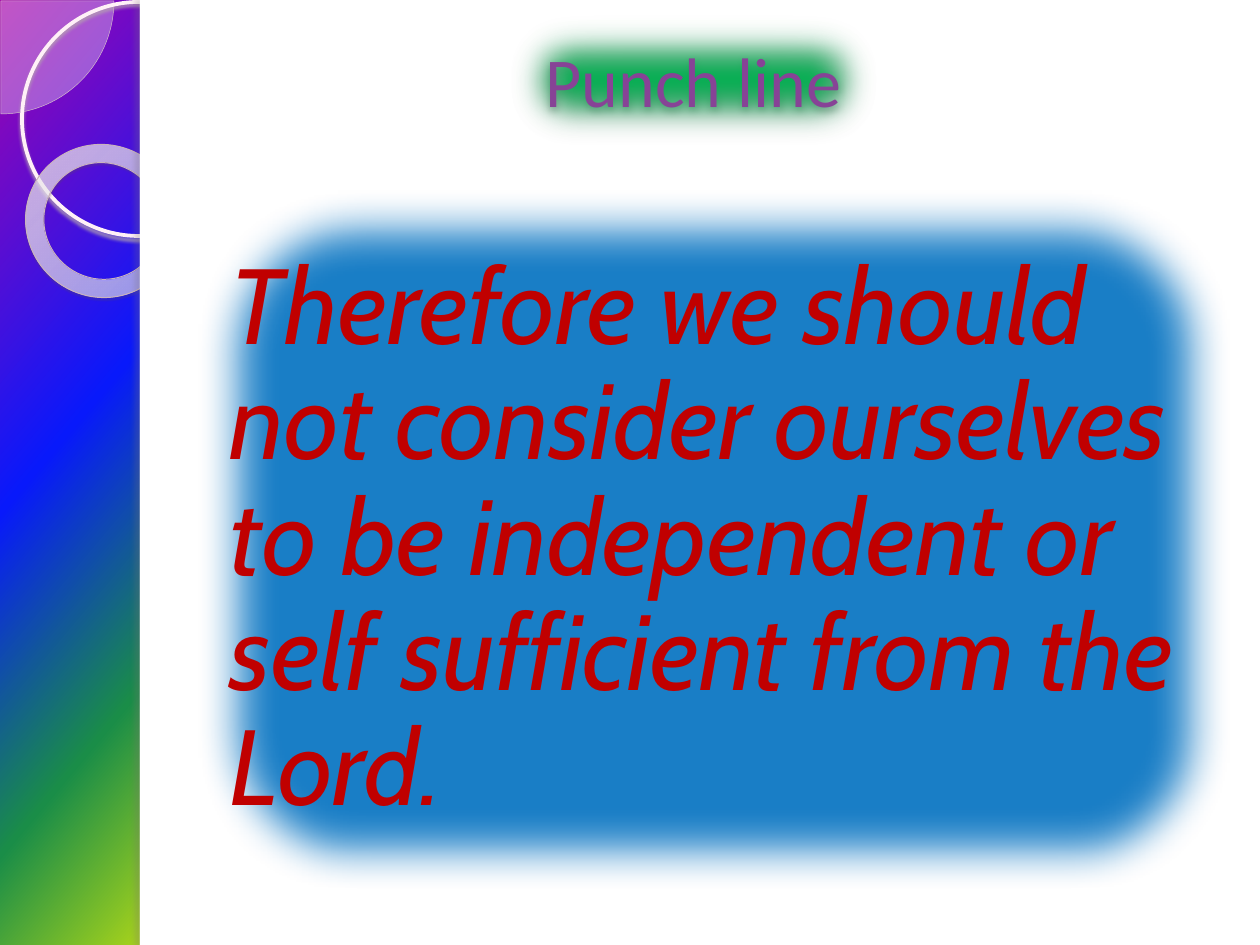
import pptx
import pptx.util
import pptx.dml.color
import pptx.enum.shapes
import pptx.enum.text
import pptx.oxml.ns
from lxml import etree

PX = 914400 / 126
Pt = pptx.util.Pt
RGB = pptx.dml.color.RGBColor
KIND = pptx.enum.shapes.MSO_SHAPE
MIDDLE = pptx.enum.text.MSO_ANCHOR.MIDDLE
qn = pptx.oxml.ns.qn

WHITE = RGB(0xFF, 0xFF, 0xFF)
PALE = RGB(0xFE, 0xFA, 0xFC)
CREAM = RGB(0xFF, 0xFD, 0xFE)
PINK = RGB(0xE7, 0xBC, 0xD0)
BLUSH = RGB(0xFF, 0xF0, 0xF7)
ROSE = RGB(0xD7, 0xC0, 0xCB)
MAUVE = RGB(0xCA, 0xB3, 0xBD)
DUST = RGB(0xB7, 0xA8, 0xAF)
SLATE = RGB(0x5C, 0x52, 0x57)
GREY = RGB(0x7A, 0x72, 0x76)
BLACK = RGB(0x00, 0x00, 0x00)
GREEN = RGB(0x00, 0xB0, 0x50)
LILAC = RGB(0xAC, 0x66, 0xBB)
PLUM = RGB(0x87, 0x43, 0x96)
SKY = RGB(0x00, 0x70, 0xC0)
RED = RGB(0xC0, 0x00, 0x00)
RAINBOW = [
    (0, RGB(0xA6, 0x03, 0xAB), 100),
    (21, RGB(0x08, 0x19, 0xFB), 100),
    (35, RGB(0x1A, 0x8D, 0x48), 100),
    (52, RGB(0xFF, 0xFF, 0x00), 100),
    (73, RGB(0xEE, 0x3F, 0x17), 100),
    (88, RGB(0xE8, 0x17, 0x66), 100),
    (100, RGB(0xA6, 0x03, 0xAB), 100),
]
GLASS = [(0, PALE, 70), (70, CREAM, 55), (100, PINK, 60)]

deck = pptx.Presentation()
deck.slide_width = round(1260 * PX)
deck.slide_height = round(945 * PX)
slide = deck.slides.add_slide(deck.slide_layouts[6])


def add(kind, box, fill=None, alpha=100, line=None, width=0, shade=None, soft=0):
    """Add a shape; shade is (colour, alpha, blur, distance, angle), soft is in points."""
    shape = slide.shapes.add_shape(kind, *[round(n * PX) for n in box])
    shape.shadow.inherit = False
    if fill is None:
        shape.fill.background()
    else:
        shape.fill.solid()
        shape.fill.fore_color.rgb = fill
        tint = next(shape._element.spPr.iter(qn("a:srgbClr")))
        etree.SubElement(tint, qn("a:alpha"), val=str(alpha * 1000))
    if line is None:
        shape.line.fill.background()
    else:
        shape.line.color.rgb = line
        shape.line.width = Pt(width)
    effects = shape._element.spPr.find(qn("a:effectLst"))
    if shade:
        color, dense, blur, dist, angle = shade
        cast = etree.SubElement(effects, qn("a:outerShdw"), blurRad=str(Pt(blur)),
                                dist=str(Pt(dist)), dir=str(angle * 60000),
                                rotWithShape="0")
        tone = etree.SubElement(cast, qn("a:srgbClr"), val=str(color))
        etree.SubElement(tone, qn("a:alpha"), val=str(dense * 1000))
    if soft:
        etree.SubElement(effects, qn("a:softEdge"), rad=str(Pt(soft)))
    return shape


def blend(root, stops):
    """Give the first gradient under root these stops and return its element."""
    fill = next(root.iter(qn("a:gradFill")))
    for child in list(fill):
        fill.remove(child)
    row = etree.SubElement(fill, qn("a:gsLst"))
    for place, color, alpha in stops:
        stop = etree.SubElement(row, qn("a:gs"), pos=str(place * 1000))
        tone = etree.SubElement(stop, qn("a:srgbClr"), val=str(color))
        etree.SubElement(tone, qn("a:alpha"), val=str(alpha * 1000))
    return fill


# Background and side ornaments
slide.background.fill.gradient()
back = blend(slide._element, RAINBOW)
etree.SubElement(back, qn("a:lin"), ang=str(40 * 60000), scaled="0")

pie = add(KIND.PIE, (-112, -112, 226, 226), PALE, 33, ROSE, 0.25)
pie.adjustments[0] = 0
pie.adjustments[1] = 54
add(KIND.OVAL, (22, 2, 234, 234), line=BLUSH, width=2.15, shade=(DUST, 85, 2, 2, 90))
ring = add(KIND.DONUT, (25, 145, 155, 152), line=MAUVE, width=0.58,
           shade=(SLATE, 35, 1, 1.2, 75))
ring.adjustments[0] = 0.12
ring.rotation = 38.6
ring.fill.gradient()
glow = blend(ring._element, GLASS)
radial = etree.SubElement(glow, qn("a:path"), path="circle")
etree.SubElement(radial, qn("a:fillToRect"), l="-408000", t="-50000",
                 r="508000", b="150000")

# White page with a shaded left edge
add(KIND.RECTANGLE, (140, 0, 1120, 945), WHITE)
add(KIND.RECTANGLE, (140, 0, 10, 945), WHITE, shade=(GREY, 25, 3, 3, 180))

# Title and message
title = add(KIND.RECTANGLE, (494, 0, 399, 158), GREEN, line=LILAC, width=0.75,
            shade=(BLACK, 43, 5, 2, 90), soft=25)
title.text_frame.text = "Punch line"

area = (198, 190, 1033, 701)
add(KIND.ROUNDED_RECTANGLE, area, SKY, 90, WHITE, 2, soft=25)
note = slide.shapes.add_textbox(*[round(n * PX) for n in area])
frame = note.text_frame
frame.text = ("Therefore we should not consider ourselves to be independent "
              "or self sufficient from the Lord.")
frame.margin_left = frame.margin_right = round(32 * PX)
frame.margin_top = frame.margin_bottom = round(32 * PX)
frame.paragraphs[0].line_spacing = 0.9

ALIGN = pptx.enum.text.PP_ALIGN
for shape, face, size, color, align, slant in [
    (title, "Calibri", 40, PLUM, ALIGN.CENTER, False),
    (note, "Cabin", 61, RED, ALIGN.LEFT, True),
]:
    shape.text_frame.word_wrap = True
    shape.text_frame.vertical_anchor = MIDDLE
    line = shape.text_frame.paragraphs[0]
    line.alignment = align
    font = line.runs[0].font
    font.name = face
    font.size = Pt(size)
    font.italic = slant
    font.color.rgb = color

deck.save("out.pptx")
